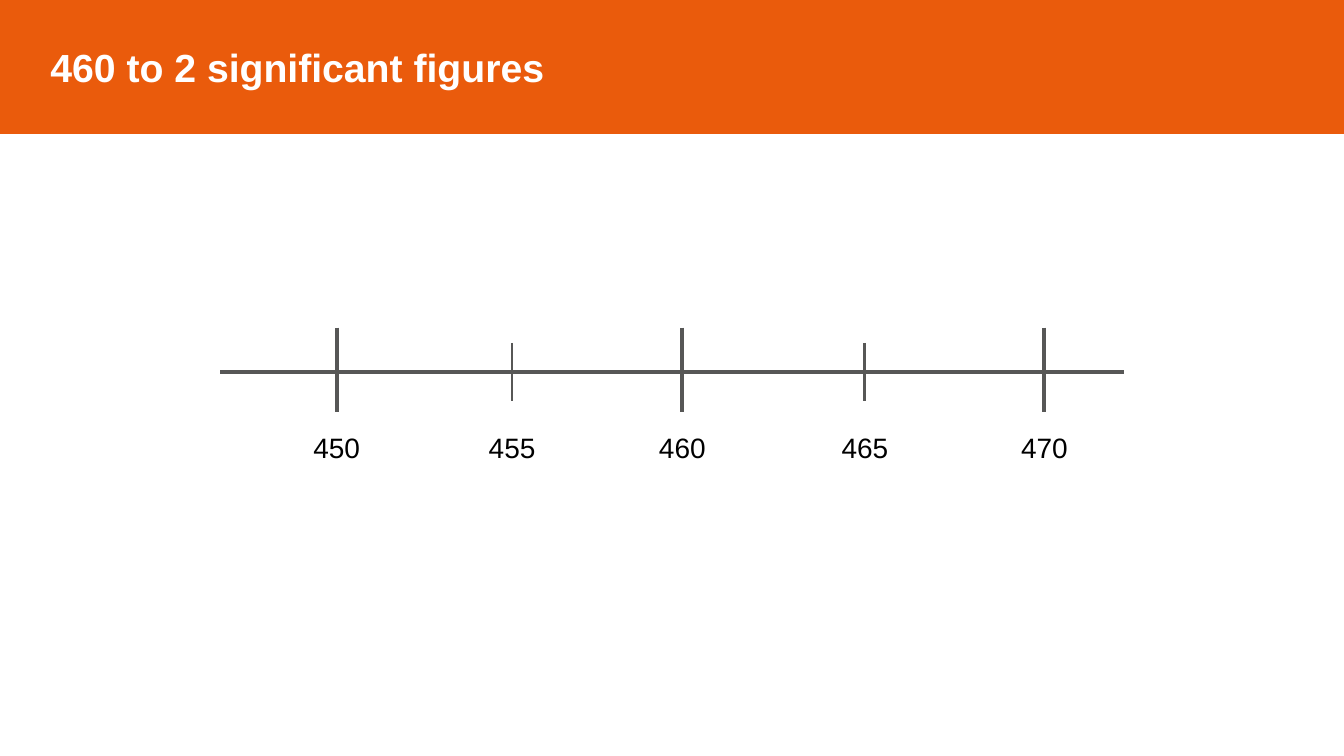
from lxml import etree
from pptx import Presentation
from pptx.dml.color import RGBColor
from pptx.enum.shapes import MSO_CONNECTOR
from pptx.enum.text import MSO_ANCHOR, MSO_AUTO_SIZE, PP_ALIGN
from pptx.oxml.ns import qn
from pptx.util import Pt

STRAIGHT = MSO_CONNECTOR.STRAIGHT
MIDDLE = MSO_ANCHOR.MIDDLE
NO_FIT = MSO_AUTO_SIZE.NONE
GROW = MSO_AUTO_SIZE.SHAPE_TO_FIT_TEXT
LEFT = PP_ALIGN.LEFT
CENTER = PP_ALIGN.CENTER

PAGE_WIDTH, PAGE_HEIGHT = 960, 540
TITLE_ONLY = 5


def color(value):
    return RGBColor.from_string(value)


class NumberLinePage:
    font = "Arial"
    orange = "EA5B0C"
    gray = "575756"
    black = "000000"
    white = "FFFFFF"

    def __init__(self, deck):
        self.page = deck.slides.add_slide(deck.slide_layouts[TITLE_ONLY])

    def add_span(self, para, text, size, ink, bold=False):
        span = para.add_run()
        span.text = text
        span.font.name = self.font
        span.font.size = Pt(size)
        span.font.bold = bold
        span.font.color.rgb = color(ink)

    def title(self, text, height):
        banner = self.page.shapes.title
        banner.left, banner.top = Pt(0), Pt(0)
        banner.width, banner.height = Pt(PAGE_WIDTH), Pt(height)
        banner.fill.solid()
        banner.fill.fore_color.rgb = color(self.orange)
        banner.line.color.rgb = color(self.orange)
        banner.line.width = Pt(1)
        frame = banner.text_frame
        frame.auto_size = NO_FIT
        frame.vertical_anchor = MIDDLE
        frame.margin_left = Pt(36)
        para = frame.paragraphs[0]
        para.alignment = LEFT
        self.add_span(para, text, 28, self.white, bold=True)

    def line(self, x1, y1, x2, y2, weight):
        stroke = self.page.shapes.add_connector(
            STRAIGHT, Pt(x1), Pt(y1), Pt(x2), Pt(y2))
        stroke.line.color.rgb = color(self.gray)
        stroke.line.width = Pt(weight)
        properties = stroke.element.find(qn("p:spPr"))
        etree.SubElement(properties, qn("a:effectLst"))

    def label(self, text, center, top, width=48, height=31.5):
        box = self.page.shapes.add_textbox(
            Pt(center - width / 2), Pt(top), Pt(width), Pt(height))
        frame = box.text_frame
        frame.word_wrap = False
        frame.auto_size = GROW
        para = frame.paragraphs[0]
        para.alignment = CENTER
        self.add_span(para, text, 20, self.black)


def main():
    deck = Presentation()
    deck.slide_width, deck.slide_height = Pt(PAGE_WIDTH), Pt(PAGE_HEIGHT)
    page = NumberLinePage(deck)
    page.title("460 to 2 significant figures", 95)

    page.line(157.5, 265.7, 803, 265.7, 3)
    major_tick = (234, 294.5, 3)
    minor_tick = (245, 286.5, 2)
    tick_centers = {450: 240.5, 455: 365.8, 460: 487.4, 465: 617.8, 470: 746}
    for value, center in tick_centers.items():
        top, bottom, weight = minor_tick if value % 10 else major_tick
        page.line(center, top, center, bottom, weight)
        page.label(str(value), center, 304)

    deck.save("out.pptx")


if __name__ == "__main__":
    main()
